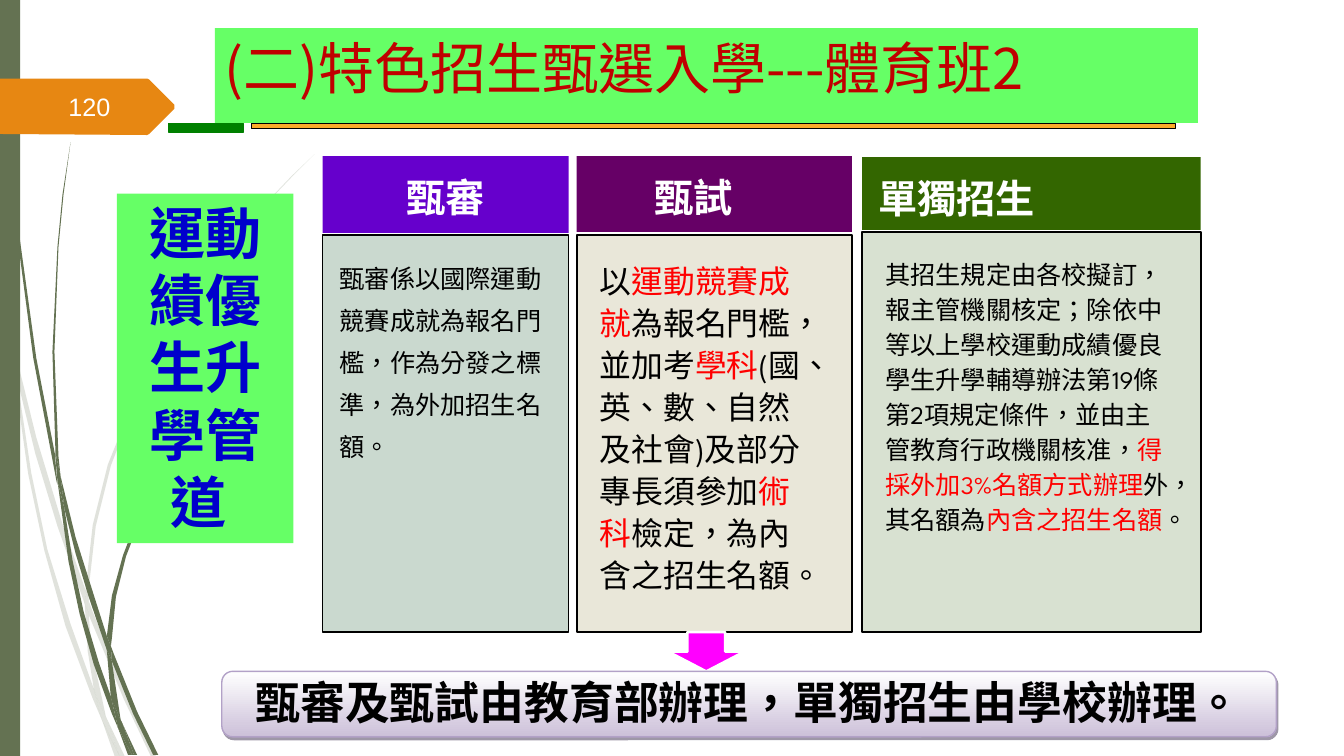
import lxml.etree
import pptx
import pptx.dml.color
import pptx.enum.dml
import pptx.enum.shapes
import pptx.enum.text
import pptx.oxml.ns
import pptx.util

RGB = pptx.dml.color.RGBColor
SHAPE = pptx.enum.shapes.MSO_SHAPE
ALIGN = pptx.enum.text.PP_ALIGN
ANCHOR = pptx.enum.text.MSO_ANCHOR
qn = pptx.oxml.ns.qn

PX = 9144  # one hundredth of an inch in EMU
LATIN = "League Spartan"
HAN = "Noto Sans CJK SC"

BLACK = RGB(0x00, 0x00, 0x00)
WHITE = RGB(0xFF, 0xFF, 0xFF)
RED = RGB(0xFF, 0x00, 0x00)
DARK_RED = RGB(0xC0, 0x00, 0x00)
BLUE = RGB(0x00, 0x00, 0xCC)
OLIVE = RGB(0x64, 0x72, 0x52)
ORANGE = RGB(0xE7, 0x87, 0x12)
AMBER = RGB(0xFD, 0xAB, 0x2A)
GREEN = RGB(0x00, 0x80, 0x00)
LIME = RGB(0x66, 0xFF, 0x66)
MAGENTA = RGB(0xFF, 0x00, 0xFF)
VIOLET = RGB(0x66, 0x00, 0xCC)
PLUM = RGB(0x66, 0x00, 0x66)
FOREST = RGB(0x33, 0x66, 0x00)
SAGE = RGB(0xC5, 0xD5, 0xCA)
SAND = RGB(0xE7, 0xE5, 0xD5)
MINT = RGB(0xD4, 0xDE, 0xCD)
LILAC = RGB(0xCC, 0xC0, 0xD9)
LILAC_EDGE = RGB(0xB2, 0xA1, 0xC7)
LILAC_SHADOW = RGB(0x3F, 0x31, 0x51)

# Outlines of the grass blades, piece by piece
PALE_BLADES = [
    [(11, 350), (8, 322), (0, 282), (0, 299), (10, 344)],
    [(57, 522), (84, 599), (85, 586), (62, 520), (36, 434), (14, 345), (17, 376), (35, 450)],
    [(92, 607), (88, 596), (88, 610), (123, 694), (150, 751), (155, 751), (127, 692)],
    [(119, 751), (124, 751), (105, 711)],
    [(93, 683), (70, 619), (47, 545), (31, 469), (17, 376), (11, 350), (28, 470), (44, 546),
     (65, 621), (92, 693), (101, 714), (99, 707)],
    [(84, 599), (87, 646), (93, 683), (96, 692), (105, 711), (104, 706), (91, 646), (88, 610),
     (88, 608)],
    [(88, 584), (95, 522), (110, 462), (132, 405), (160, 349), (192, 296), (229, 245), (268, 198),
     (290, 175), (312, 153), (289, 175), (268, 197), (228, 244), (190, 295), (158, 348),
     (130, 404), (107, 461), (92, 521), (85, 584), (85, 586), (88, 596)],
    [(101, 714), (114, 751), (119, 751)],
    [(88, 608), (88, 610), (88, 596), (85, 586), (84, 599)],
    [(96, 692), (93, 683), (99, 707), (101, 714), (119, 751), (105, 711)],
]
DARK_BLADES = [
    [(7, 110), (17, 233), (33, 355), (56, 477), (57, 481), (55, 457), (55, 453), (36, 355),
     (19, 232), (8, 109), (5, 48), (3, 0), (3, 48)],
    [(88, 592), (106, 645), (106, 631), (93, 590), (75, 533), (60, 472), (64, 505), (75, 549)],
    [(113, 649), (110, 641), (111, 656), (132, 708), (152, 749), (157, 749), (136, 706)],
    [(110, 691), (98, 657), (83, 607), (72, 556), (64, 505), (57, 477), (68, 557), (79, 609),
     (93, 659), (111, 708), (117, 722), (116, 717)],
    [(60, 472), (58, 453), (54, 349), (58, 245), (63, 193), (70, 141), (62, 193), (57, 245),
     (52, 349), (55, 449)],
    [(133, 749), (136, 749), (122, 719)],
    [(57, 477), (64, 505), (60, 472), (55, 449), (55, 453)],
    [(111, 633), (115, 592), (125, 552), (140, 513), (158, 476), (180, 440), (205, 406),
     (231, 374), (246, 359), (261, 344), (245, 358), (231, 373), (204, 405), (178, 439),
     (156, 474), (137, 512), (122, 551), (111, 591), (106, 631), (110, 641)],
    [(117, 722), (127, 749), (131, 749)],
    [(106, 645), (110, 692), (116, 706), (122, 719), (120, 716), (111, 656), (109, 651)],
    [(106, 645), (109, 651), (111, 656), (110, 641), (106, 631)],
    [(116, 706), (110, 691), (116, 717), (117, 722), (131, 749), (133, 749), (122, 719)],
]
FLAG = [(0, 133), (0, 78), (146, 78), (148, 79), (173, 104), (173, 108), (148, 133), (146, 134)]

CRITERIA_AUDIT = [
    ("甄審係以國際運動競賽成就為報名門檻，作為分發之標準，為外加招生名額。", BLACK)]
CRITERIA_TEST = [
    ("以", BLACK), ("運動競賽成就", RED), ("為報名門檻，並加考", BLACK), ("學科", RED),
    ("(國、英、數、自然及社會)及部分專長須參加", BLACK), ("術科", RED),
    ("檢定，為內含之招生名額。", BLACK)]
CRITERIA_SCHOOL = [
    ("其招生規定由各校擬訂，報主管機關核定；除依中等以上學校運動成績優良學生升學輔導辦法"
     "第19條第2項規定條件，並由主管教育行政機關核准，", BLACK),
    ("得採外加3%名額方式辦理", RED), ("外，其名額為", BLACK), ("內含之招生名額", RED),
    ("。", BLACK)]


def add_span(para, text, *, size, colour, font=HAN, bold=False):
    span = para.add_run()
    span.text = text
    span.font.size = pptx.util.Pt(size)
    span.font.color.rgb = colour
    span.font.bold = bold
    span.font.name = font
    props = span.font._element
    props.set("lang", "zh-TW")
    lxml.etree.SubElement(props, qn("a:ea")).set("typeface", HAN)


def set_alpha(parent, percent):
    colour = parent.find(".//" + qn("a:srgbClr"))
    lxml.etree.SubElement(colour, qn("a:alpha")).set("val", str(percent * 1000))


class Board:
    def __init__(self, deck):
        self.page = deck.slides.add_slide(deck.slide_layouts[5])

    def paint(self, shape, fill, line=None, width=0.75, alpha=100):
        shape.shadow.inherit = False
        shape.fill.solid()
        shape.fill.fore_color.rgb = fill
        if alpha < 100:
            set_alpha(shape.fill._xPr.find(qn("a:solidFill")), alpha)
        if line is None:
            shape.line.fill.background()
        else:
            shape.line.color.rgb = line
            shape.line.width = pptx.util.Pt(width)
        return shape

    def shape(self, kind, at, fill, **look):
        box = self.page.shapes.add_shape(kind, *(n * PX for n in at))
        return self.paint(box, fill, **look)

    def outline(self, points, fill, **look):
        builder = self.page.shapes.build_freeform(*points[0], scale=PX)
        builder.add_line_segments(points[1:], close=True)
        return self.paint(builder.convert_to_shape(), fill, **look)

    def text(self, box, spans, align=ALIGN.LEFT, anchor=ANCHOR.TOP, spacing=None,
             insets=(10, 5, 10, 5), **style):
        frame = box.text_frame
        frame.word_wrap = True
        frame.auto_size = pptx.enum.text.MSO_AUTO_SIZE.NONE
        frame.vertical_anchor = anchor
        (frame.margin_left, frame.margin_top,
         frame.margin_right, frame.margin_bottom) = (n * PX for n in insets)
        para = frame.paragraphs[0]
        para.alignment = align
        if spacing:
            para.line_spacing = pptx.util.Pt(spacing)
        for text, colour in spans:
            add_span(para, text, colour=colour, **style)

    def label(self, at, text, colour, **style):
        box = self.page.shapes.add_textbox(*(n * PX for n in at))
        self.text(box, [(text, colour)], **style)

    def title(self, at, text, colour, fill, **style):
        box = self.page.shapes.title
        box.left, box.top, box.width, box.height = (n * PX for n in at)
        box.fill.solid()
        box.fill.fore_color.rgb = fill
        self.text(box, [(text, colour)], **style)

    def banner(self, at, text):
        box = self.shape(SHAPE.ROUNDED_RECTANGLE, at, LILAC, line=LILAC_EDGE, width=1)
        box.fill.gradient()
        box.fill.gradient_angle = 270
        for stop, colour in zip(box.fill.gradient_stops, (WHITE, LILAC)):
            stop.color.rgb = colour
        effects = box._element.spPr.find(qn("a:effectLst"))
        shadow = lxml.etree.SubElement(effects, qn("a:outerShdw"), dist="28000", dir="3780000")
        lxml.etree.SubElement(shadow, qn("a:srgbClr")).set("val", str(LILAC_SHADOW))
        set_alpha(shadow, 50)
        self.text(box, [(text, BLACK)], align=ALIGN.CENTER, spacing=35, size=32, bold=True)


def main():
    deck = pptx.Presentation()
    deck.slide_width, deck.slide_height = 1333 * PX, 750 * PX
    board = Board(deck)

    # Grass, side bar and page flag
    for blade in PALE_BLADES:
        board.outline(blade, OLIVE, alpha=20)
    for blade in DARK_BLADES:
        board.outline(blade, OLIVE)
    board.shape(SHAPE.RECTANGLE, (0, 0, 20, 750), OLIVE)
    board.outline(FLAG, ORANGE)
    board.label((58, 86, 85, 40), "120", WHITE, anchor=ANCHOR.MIDDLE, size=18, font="Arial")

    # Title and its rule
    board.shape(SHAPE.RECTANGLE, (167, 123, 75, 8), GREEN, line=GREEN)
    board.shape(SHAPE.RECTANGLE, (249, 123, 917, 5), AMBER, line=BLACK)
    board.title((213, 28, 975, 94), "(二)特色招生甄選入學---體育班2", DARK_RED, LIME, size=40)

    # Three columns: header, its label, criteria
    wide = (23, 23, 30, 34)
    columns = [
        (320, 244, (155, 76), VIOLET, "甄審", (320, 162, 244, 62),
         233, SAGE, CRITERIA_AUDIT, 18, 30, (17, 17, 23, 25)),
        (572, 273, (155, 75), PLUM, "甄試", (567, 162, 241, 62),
         233, SAND, CRITERIA_TEST, 22.7, 30, wide),
        (855, 336, (156, 72), FOREST, "單獨招生", (824, 163, 249, 62),
         230, MINT, CRITERIA_SCHOOL, 18, 25, wide),
    ]
    for (left, width, (head_top, head_height), head_fill, name, name_at,
         top, fill, criteria, size, spacing, insets) in columns:
        board.shape(SHAPE.RECTANGLE, (left, head_top, width, head_height), head_fill)
        body = board.shape(SHAPE.RECTANGLE, (left, top, width, 627 - top), fill,
                           line=BLACK, width=1.25, alpha=90)
        board.text(body, criteria, size=size, spacing=spacing, insets=insets, font=LATIN)
        board.label(name_at, name, WHITE, align=ALIGN.CENTER, spacing=37,
                    size=28, font="Arial", bold=True)

    # Side heading
    side = board.shape(SHAPE.RECTANGLE, (116, 192, 175, 347), LIME)
    board.text(side, [("運動績優生升學管道 ", BLUE)], align=ALIGN.CENTER, size=40, bold=True)

    # Arrow and conclusion
    board.shape(SHAPE.DOWN_ARROW, (663, 627, 75, 39), MAGENTA, line=WHITE, width=1.75)
    board.banner((220, 666, 1046, 65), "甄審及甄試由教育部辦理，單獨招生由學校辦理。")
    deck.save("out.pptx")


if __name__ == "__main__":
    main()
